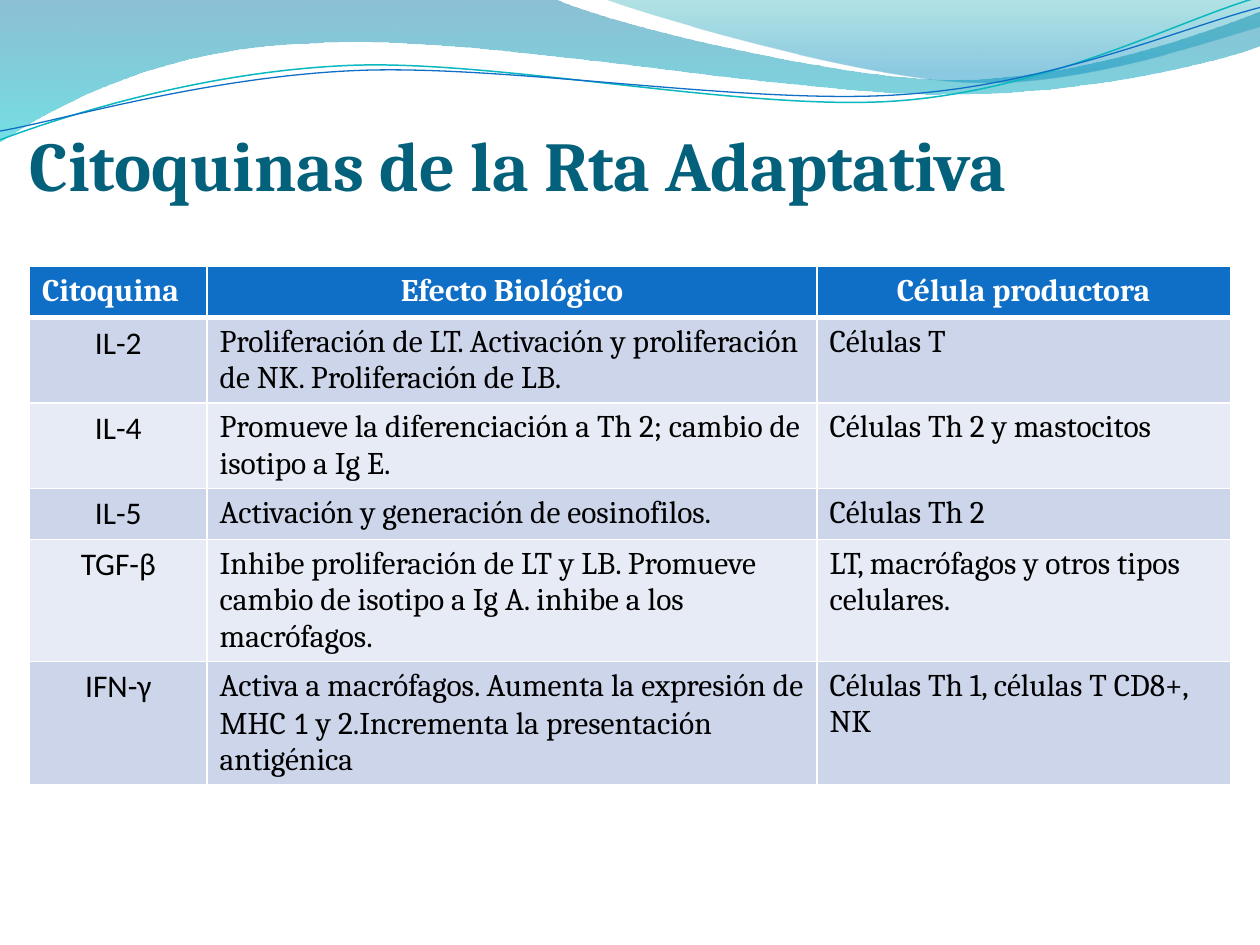
"""Build a slide with a table of adaptive-response cytokines under a wave banner."""
from dataclasses import dataclass
from math import cos, radians, sin

from lxml.etree import SubElement
from pptx import Presentation
from pptx.dml.color import RGBColor
from pptx.enum.text import MSO_ANCHOR as Anchor, MSO_AUTO_SIZE as AutoSize, PP_ALIGN as Align
from pptx.oxml.ns import qn
from pptx.util import Pt

Point = tuple[float, float]
WHITE, BLACK, BLUE = "FFFFFF", "000000", "0F6FC6"
BANDS = ("CCD5EA", "E7EBF5")
LEFT = 16.87
COLUMN_WIDTHS = (101.5, 348.5, 236.2)
ROW_HEIGHT = 29.2
HEADERS = ("Citoquina", "Efecto Biológico", "Célula productora")


@dataclass
class Stop:
    position: float
    color: str
    opacity: int


@dataclass
class Wave:
    start: Point
    segments: list[tuple[float, ...]]
    stops: tuple[Stop, ...] = ()
    line_color: str = ""
    line_width: float = 0
    center: Point = (0, 0)
    tilt: float = 0


@dataclass
class Cytokine:
    name: str
    effect: list[tuple[str, str]]
    producer: str


WAVES = [
    Wave((0, 0), [
        (316.8, -0.7),
        (342.7, 12.2, 478.1, 45.4, 545.8, 45.4),
        (614.2, 45.4, 689.8, 18.7, 720, 6.5),
        (720.7, 25.9),
        (707.8, 31.7, 626.4, 54.7, 537.1, 54),
        (447.8, 54, 275, 20.2, 185, 24.5),
        (92.9, 25.9, 33.1, 59.8, -0.7, 81.4),
        (0, 0),
    ], stops=(Stop(0, "0074A1", 45), Stop(1, "00C6CF", 55))),
    Wave((344.9, -0.7), [
        (366.5, 7.9, 491, 44.6, 553.7, 46.8),
        (616.3, 49.7, 691.9, 23, 720, 15.1),
        (720, 0),
        (344.9, -0.7),
    ], stops=(Stop(0, "00A1A9", 30), Stop(0.8, "008BBF", 45))),
    Wave((0, 79.9), [
        (34.6, 67, 113.8, 41, 199.4, 37.4),
        (284.4, 33.8, 427, 64.1, 513.4, 57.6),
        (599.8, 51.1, 675.4, 10.8, 718.6, -1.4),
    ], line_color="0AB8BF", line_width=0.85, center=(359.3, 41.4), tilt=-2.7),
    Wave((0, 74.9), [
        (33.8, 69.1, 118.1, 43.9, 203.8, 40.3),
        (290.2, 36.7, 429.8, 60.5, 516.2, 54),
        (601.9, 48.2, 677.5, 15.1, 720, 4.3),
    ], line_color=BLUE, line_width=0.75, center=(359.6, 42.5), tilt=-2.7),
]

CYTOKINES = [
    Cytokine("IL-2", [("Proliferación de LT. Activación y proliferación de NK. Proliferación de LB.", "Cambria")],
             "Células T"),
    Cytokine("IL-4", [("Promueve la diferenciación a Th 2; cambio de isotipo a Ig E.", "Cambria")],
             "Células Th 2 y mastocitos"),
    Cytokine("IL-5", [("Activación y generación de eosinofilos.", "Cambria")], "Células Th 2"),
    Cytokine("TGF-β", [("Inhibe proliferación de LT y LB. Promueve cambio de isotipo a Ig A. "
                        "inhibe a los macrófagos.", "Cambria")],
             "LT, macrófagos y otros tipos celulares."),
    Cytokine("IFN-γ", [("Activa a macrófagos. Aumenta la expresión de MHC ", "Cambria"), ("1 ", "Calibri"),
                       ("y 2.Incrementa la presentación antigénica", "Cambria")],
             "Células Th 1, células T CD8+, NK"),
]


def rgb(color: str) -> RGBColor:
    return RGBColor.from_string(color)


def add_text(paragraph, text: str, *, font: str = "Cambria", size: float = 18, color: str = BLACK,
             bold: bool = False, align: Align = Align.LEFT) -> None:
    paragraph.alignment = align
    run = paragraph.add_run()
    run.text = text
    run.font.name, run.font.size, run.font.bold = font, Pt(size), bold
    run.font.color.rgb = rgb(color)


def level_point(point: Point, wave: Wave) -> tuple[Pt, Pt]:
    angle = radians(-wave.tilt)
    x, y = point[0] - wave.center[0], point[1] - wave.center[1]
    return (Pt(wave.center[0] + x * cos(angle) - y * sin(angle)),
            Pt(wave.center[1] + x * sin(angle) + y * cos(angle)))


def bend_segments(shape, segments: list[tuple[float, ...]]) -> None:
    lines = iter(list(shape._element.iter(qn("a:lnTo"))))
    for segment in segments:
        line = next(lines)
        if len(segment) == 6:
            line.tag = qn("a:cubicBezTo")
            for control in (next(lines), next(lines)):
                line.append(control[0])
                control.getparent().remove(control)


def fill_gradient(fill, stops: tuple[Stop, ...]) -> None:
    fill.gradient()
    fill.gradient_angle = 270
    for gradient_stop, stop in zip(fill.gradient_stops, stops):
        gradient_stop.position = stop.position
        gradient_stop.color.rgb = rgb(stop.color)
    for element, stop in zip(fill._xPr.iter(qn("a:srgbClr")), stops):
        SubElement(element, qn("a:alpha"), val=str(stop.opacity * 1000))


def add_wave(slide, wave: Wave) -> None:
    points = [wave.start]
    for segment in wave.segments:
        points += zip(segment[::2], segment[1::2])
    start, *others = [level_point(point, wave) for point in points]
    builder = slide.shapes.build_freeform(*start)
    builder.add_line_segments(others, close=bool(wave.stops))
    shape = builder.convert_to_shape()
    bend_segments(shape, wave.segments)
    shape.rotation = wave.tilt
    shape.shadow.inherit = False
    if wave.stops:
        fill_gradient(shape.fill, wave.stops)
        shape.line.fill.background()
    else:
        shape.fill.background()
        shape.line.color.rgb = rgb(wave.line_color)
        shape.line.width = Pt(wave.line_width)


def style_cell(cell, color: str, top: float = 1, bottom: float = 1) -> None:
    properties = cell._tc.get_or_add_tcPr()
    for side, width in (("L", 1), ("R", 1), ("T", top), ("B", bottom)):
        line = SubElement(properties, qn(f"a:ln{side}"), w=str(Pt(width)))
        SubElement(SubElement(line, qn("a:solidFill")), qn("a:srgbClr"), val=WHITE)
    cell.fill.solid()
    cell.fill.fore_color.rgb = rgb(color)


def add_title(slide, text: str) -> None:
    title = slide.shapes.title
    slide.shapes._spTree.append(title._element)
    title.left, title.top, title.width, title.height = Pt(LEFT), Pt(39.6), Pt(648), Pt(77.8)
    frame = title.text_frame
    frame.auto_size, frame.word_wrap, frame.vertical_anchor = AutoSize.NONE, True, Anchor.BOTTOM
    frame.margin_left = frame.margin_right = frame.margin_bottom = 0
    frame.margin_top = Pt(3.6)
    add_text(frame.paragraphs[0], text, size=40, color="04617B", bold=True)


def add_cytokine_table(slide, cytokines: list[Cytokine]) -> None:
    row_count = len(cytokines) + 1
    table = slide.shapes.add_table(row_count, len(HEADERS), Pt(LEFT), Pt(152.4),
                                   Pt(sum(COLUMN_WIDTHS)), Pt(ROW_HEIGHT * row_count)).table
    for column, width in zip(table.columns, COLUMN_WIDTHS):
        column.width = Pt(width)
    for index, header in enumerate(HEADERS):
        cell = table.cell(0, index)
        style_cell(cell, BLUE, bottom=3)
        add_text(cell.text_frame.paragraphs[0], header, color=WHITE, bold=True,
                 align=Align.CENTER if index else Align.LEFT)
    for row, cytokine in enumerate(cytokines, start=1):
        contents = ([(cytokine.name, "Calibri")], cytokine.effect, [(cytokine.producer, "Cambria")])
        for index, runs in enumerate(contents):
            cell = table.cell(row, index)
            style_cell(cell, BANDS[(row - 1) % 2], top=3 if row == 1 else 1)
            for text, font in runs:
                add_text(cell.text_frame.paragraphs[0], text, font=font,
                         align=Align.LEFT if index else Align.CENTER)


def main() -> None:
    presentation = Presentation()
    presentation.slide_width, presentation.slide_height = Pt(720), Pt(540)
    slide = presentation.slides.add_slide(presentation.slide_layouts[5])
    for wave in WAVES:
        add_wave(slide, wave)
    add_title(slide, "Citoquinas de la Rta Adaptativa")
    add_cytokine_table(slide, CYTOKINES)
    presentation.save("out.pptx")


if __name__ == "__main__":
    main()
